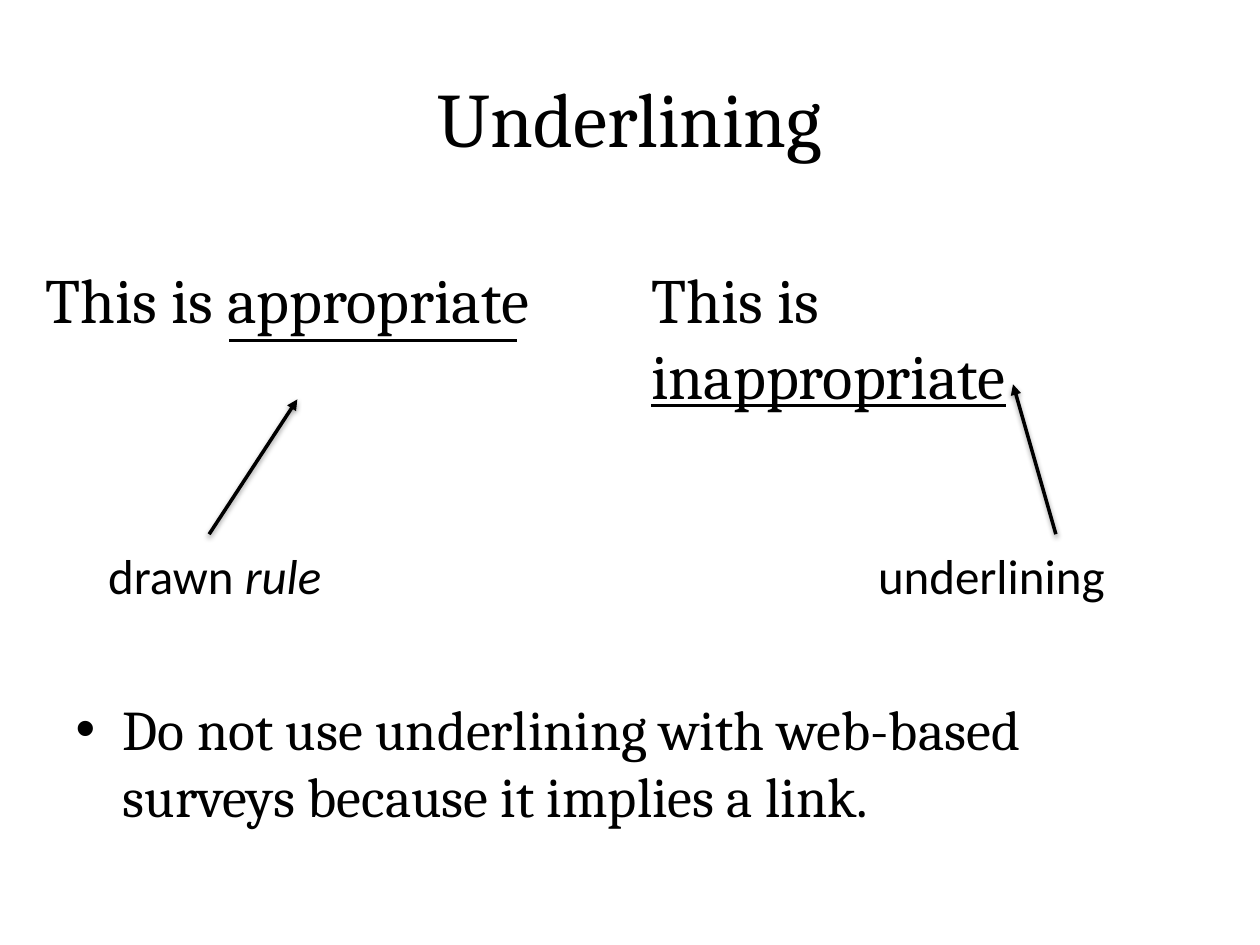
from lxml.etree import SubElement
from pptx import Presentation
from pptx.dml.color import RGBColor
from pptx.enum.shapes import MSO_CONNECTOR
from pptx.enum.text import MSO_ANCHOR, MSO_AUTO_SIZE, PP_ALIGN
from pptx.oxml.ns import qn
from pptx.util import Inches, Pt

BLACK = RGBColor(0x00, 0x00, 0x00)
WHITE = RGBColor(0xFF, 0xFF, 0xFF)
SERIF, SANS = "Cambria", "Calibri"


class SlideBuilder:
    """Holds the style and the current slide, and adds each kind of element."""

    def __init__(self, prs):
        self.formats = {
            "title": {"name": SERIF, "size": Pt(44)},
            "body": {"name": SERIF, "size": Pt(32)},
            "sample": {"name": SERIF, "size": Pt(36)},
            "label": {"name": SANS, "size": Pt(28)},
        }
        self.s = prs.slides.add_slide(prs.slide_layouts[1])
        fill = self.s.background.fill
        fill.solid()
        fill.fore_color.rgb = WHITE

    def add_runs(self, p, style, runs):
        for text, extra in runs:
            r = p.add_run()
            r.text = text
            for key, value in {**self.formats[style], **extra}.items():
                setattr(r.font, key, value)
            r.font.color.rgb = BLACK

    def place(self, sp, box):
        for key, value in zip(("left", "top", "width", "height"), box):
            setattr(sp, key, Inches(value))

    def title(self, text, box):
        sp = self.s.shapes.title
        self.place(sp, box)
        sp.text_frame.vertical_anchor = MSO_ANCHOR.MIDDLE
        p = sp.text_frame.paragraphs[0]
        p.alignment = PP_ALIGN.CENTER
        self.add_runs(p, "title", [(text, {})])

    def body(self, text, box):
        sp = self.s.placeholders[1]
        self.place(sp, box)
        self.add_runs(sp.text_frame.paragraphs[0], "body", [(text, {})])

    def text(self, style, runs, box):
        sp = self.s.shapes.add_textbox(*map(Inches, box))
        tf = sp.text_frame
        tf.word_wrap = True
        tf.auto_size = MSO_AUTO_SIZE.SHAPE_TO_FIT_TEXT
        self.add_runs(tf.paragraphs[0], style, runs)

    def line(self, start, end, width):
        sp = self.s.shapes.add_connector(
            MSO_CONNECTOR.STRAIGHT, *map(Inches, start + end))
        sp.line.color.rgb = BLACK
        sp.line.width = Pt(width)
        effects = SubElement(sp._element.spPr, qn("a:effectLst"))
        return sp, effects

    def arrow(self, start, end):
        sp, effects = self.line(start, end, 2)
        ln = sp._element.spPr.find(qn("a:ln"))
        SubElement(ln, qn("a:tailEnd"), type="triangle")
        shadow = SubElement(
            effects, qn("a:outerShdw"), blurRad=str(Pt(3.1)),
            dist=str(Pt(1.6)), dir="5400000", rotWithShape="0")
        color = SubElement(shadow, qn("a:srgbClr"), val=str(BLACK))
        SubElement(color, qn("a:alpha"), val="38000")


def main():
    prs = Presentation()
    prs.slide_width, prs.slide_height = Inches(10), Inches(7.5)
    b = SlideBuilder(prs)

    b.title("Underlining", (0.5, 0.3, 9, 1.25))
    b.body("Do not use underlining with web-based surveys because it "
           "implies a link.", (0.5, 5.46, 9, 1.6))

    b.text("sample", [("This is appropriate", {})], (0.26, 2.02, 4.8, 0.71))
    b.text("sample", [("This is ", {}), ("inappropriate", {"underline": True})],
           (5.07, 2.02, 4.38, 0.71))
    b.line((1.82, 2.7), (4.1, 2.7), 1.75)

    b.text("label", [("drawn ", {}), ("rule", {"italic": True})],
           (0.76, 4.28, 2.49, 0.57))
    b.text("label", [("underlining", {})], (6.87, 4.28, 2.49, 0.57))
    b.arrow((1.66, 4.24), (2.36, 3.17))
    b.arrow((8.38, 4.24), (8.04, 3.05))

    prs.save("out.pptx")


if __name__ == "__main__":
    main()
